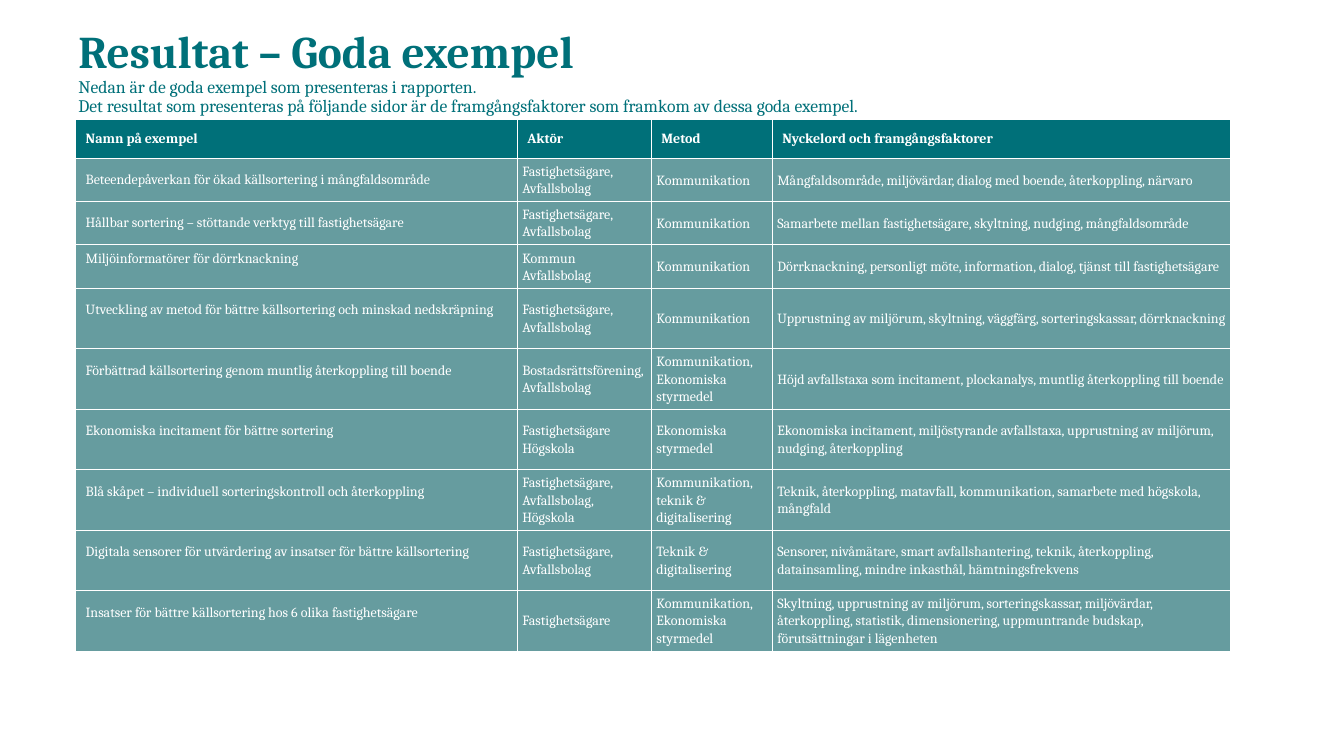
"""Build the slide "Resultat – Goda exempel" with its table of good examples."""
from pptx import Presentation
from pptx.dml.color import RGBColor
from pptx.enum.text import MSO_ANCHOR as ANCHOR
from pptx.util import Inches, Pt

COLORS = {"teal": "007079", "row": "669C9F", "white": "FFFFFF"}
FONT = "Cambria"
COL_WIDTHS = [4.38, 1.33, 1.2, 4.55]
ROW_HEIGHTS = [0.39] + [0.43] * 3 + [0.6] * 6

HEADER = ["Namn på exempel", "Aktör", "Metod", "Nyckelord och framgångsfaktorer"]
EXAMPLES = [
    ["Beteendepåverkan för ökad källsortering i mångfaldsområde",
     "Fastighetsägare, Avfallsbolag", "Kommunikation",
     "Mångfaldsområde, miljövärdar, dialog med boende, återkoppling, närvaro"],
    ["Hållbar sortering – stöttande verktyg till fastighetsägare",
     "Fastighetsägare, Avfallsbolag", "Kommunikation",
     "Samarbete mellan fastighetsägare, skyltning, nudging, mångfaldsområde"],
    ["Miljöinformatörer för dörrknackning",
     "Kommun Avfallsbolag", "Kommunikation",
     "Dörrknackning, personligt möte, information, dialog, tjänst till fastighetsägare"],
    ["Utveckling av metod för bättre källsortering och minskad nedskräpning",
     "Fastighetsägare, Avfallsbolag", "Kommunikation",
     "Upprustning av miljörum, skyltning, väggfärg, sorteringskassar, dörrknackning"],
    ["Förbättrad källsortering genom muntlig återkoppling till boende",
     "Bostadsrättsförening, Avfallsbolag", "Kommunikation, Ekonomiska styrmedel",
     "Höjd avfallstaxa som incitament, plockanalys, muntlig återkoppling till boende"],
    ["Ekonomiska incitament för bättre sortering",
     "Fastighetsägare Högskola", "Ekonomiska styrmedel",
     "Ekonomiska incitament, miljöstyrande avfallstaxa, upprustning av miljörum, "
     "nudging, återkoppling"],
    ["Blå skåpet – individuell sorteringskontroll och återkoppling",
     "Fastighetsägare, Avfallsbolag, Högskola", "Kommunikation, teknik & digitalisering",
     "Teknik, återkoppling, matavfall, kommunikation, samarbete med högskola, mångfald"],
    ["Digitala sensorer för utvärdering av insatser för bättre källsortering",
     "Fastighetsägare, Avfallsbolag", "Teknik & digitalisering",
     "Sensorer, nivåmätare, smart avfallshantering, teknik, återkoppling, "
     "datainsamling, mindre inkasthål, hämtningsfrekvens"],
    ["Insatser för bättre källsortering hos 6 olika fastighetsägare",
     "Fastighetsägare", "Kommunikation, Ekonomiska styrmedel",
     "Skyltning, upprustning av miljörum, sorteringskassar, miljövärdar, återkoppling, "
     "statistik, dimensionering, uppmuntrande budskap, förutsättningar i lägenheten"],
]


def add_text(p, text, size=10, color="white", bold=False, spacing=1.0):
    p.line_spacing = spacing
    r = p.add_run()
    r.text = text
    r.font.name = FONT
    r.font.size = Pt(size)
    r.font.bold = bold
    r.font.color.rgb = RGBColor.from_string(COLORS[color])


prs = Presentation()
prs.slide_width, prs.slide_height = Inches(13.33), Inches(7.5)
s = prs.slides.add_slide(prs.slide_layouts[6])

tf = s.shapes.add_textbox(Inches(0.68), Inches(0.26), Inches(11.46), Inches(0.92)).text_frame
tf.word_wrap = True
tf.vertical_anchor = ANCHOR.MIDDLE
p = tf.paragraphs[0]
add_text(p, "Resultat – Goda exempel", size=32.4, color="teal", bold=True, spacing=0.9)
for line in ["Nedan är de goda exempel som presenteras i rapporten.",
             "Det resultat som presenteras på följande sidor är de framgångsfaktorer "
             "som framkom av dessa goda exempel."]:
    p.add_line_break()
    add_text(p, line, size=12.6, color="teal", spacing=0.9)

table = s.shapes.add_table(len(ROW_HEIGHTS), len(COL_WIDTHS), Inches(0.75), Inches(1.18),
                           Inches(sum(COL_WIDTHS)), Inches(sum(ROW_HEIGHTS))).table
table.horz_banding = False
for column, width in zip(table.columns, COL_WIDTHS):
    column.width = Inches(width)
for row, height in zip(table.rows, ROW_HEIGHTS):
    row.height = Inches(height)

for i, texts in enumerate([HEADER] + EXAMPLES):
    for j, text in enumerate(texts):
        cell = table.cell(i, j)
        header, detail = i == 0, i > 0 and j > 0
        cell.fill.solid()
        cell.fill.fore_color.rgb = RGBColor.from_string(COLORS["teal" if header else "row"])
        cell.vertical_anchor = ANCHOR.MIDDLE
        if detail:
            cell.margin_left = cell.margin_right = Inches(0.05)
            cell.margin_top = cell.margin_bottom = 0
        elif i > 2:
            cell.margin_bottom = Inches(0.21)
        add_text(cell.text_frame.paragraphs[0], text, bold=header,
                 spacing=1.07 if detail else 1.0)

prs.save("out.pptx")
